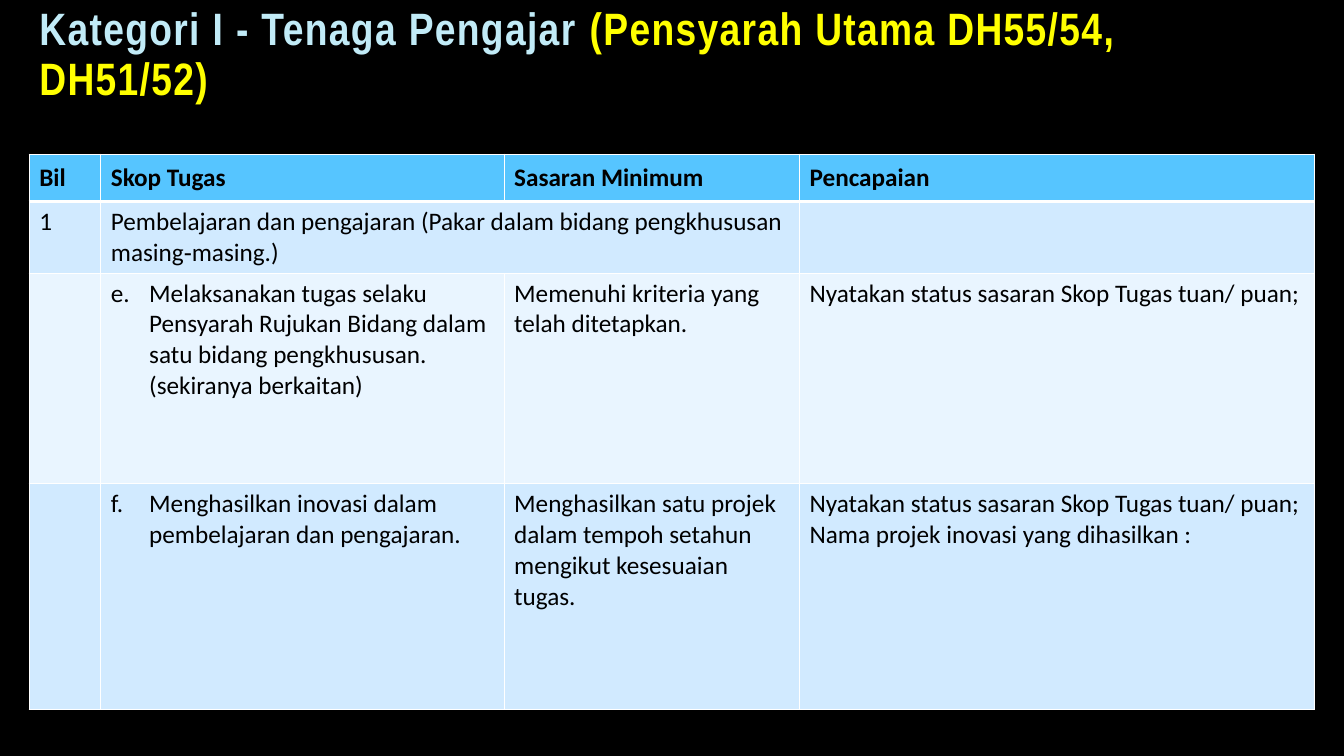
from dataclasses import dataclass

from lxml.etree import SubElement
from pptx import Presentation
from pptx.dml.color import RGBColor
from pptx.enum.text import MSO_ANCHOR, MSO_AUTO_SIZE, PP_ALIGN
from pptx.oxml.ns import qn
from pptx.util import Inches, Pt


@dataclass(frozen=True)
class Theme:
    background: str = "000000"
    title: str = "C1EBF7"
    highlight: str = "FFFF00"
    text: str = "000000"
    header: str = "56C5FF"
    bands: tuple = ("D1EAFF", "E9F5FF")
    border: str = "FFFFFF"
    title_font: str = "Arial Narrow"
    body_font: str = "Calibri"
    title_size: float = 32.4
    body_size: float = 18
    thin: float = 1
    thick: float = 3


@dataclass(frozen=True)
class Lettered:
    """Cell text numbered with the letter at position start."""
    text: str
    start: int


COLUMN_WIDTHS = (0.71, 4, 2.93, 5.11)
ROW_HEIGHTS = (0.47, 0.7, 2.09, 2.24)
STATUS = "Nyatakan status sasaran Skop Tugas tuan/ puan;"
ROWS = (
    ("Bil", "Skop Tugas", "Sasaran Minimum", "Pencapaian"),
    ("1", "Pembelajaran dan pengajaran (Pakar dalam bidang pengkhususan "
          "masing‐masing.)", "", ""),
    ("", Lettered("Melaksanakan tugas selaku Pensyarah Rujukan Bidang dalam satu "
                  "bidang pengkhususan. (sekiranya berkaitan)", 5),
     "Memenuhi kriteria yang telah ditetapkan.", STATUS),
    ("", Lettered("Menghasilkan inovasi dalam pembelajaran dan pengajaran.", 6),
     "Menghasilkan satu projek dalam tempoh setahun mengikut kesesuaian tugas.",
     STATUS + "\nNama projek inovasi yang dihasilkan :"),
)


class SlideBuilder:
    def __init__(self, presentation, theme):
        self.theme = theme
        self.slide = presentation.slides.add_slide(presentation.slide_layouts[5])
        fill = self.slide.background.fill
        fill.solid()
        fill.fore_color.rgb = RGBColor.from_string(theme.background)

    def add_title(self, left, top, width, height, parts):
        title = self.slide.shapes.title
        title.left, title.top = Inches(left), Inches(top)
        title.width, title.height = Inches(width), Inches(height)
        frame = title.text_frame
        frame.word_wrap = True
        frame.auto_size = MSO_AUTO_SIZE.NONE
        frame.vertical_anchor = MSO_ANCHOR.BOTTOM
        paragraph = frame.paragraphs[0]
        paragraph.alignment = PP_ALIGN.LEFT
        paragraph.line_spacing = 0.9
        for text, color in parts:
            run = paragraph.add_run()
            run.text = text
            run.font.name = self.theme.title_font
            run.font.size = Pt(self.theme.title_size)
            run.font.bold = True
            run.font.color.rgb = RGBColor.from_string(color)
            run.font._element.set("spc", "100")

    def add_table(self, left, top, widths, heights, rows):
        frame = self.slide.shapes.add_table(
            len(rows), len(widths), Inches(left), Inches(top),
            Inches(sum(widths)), Inches(sum(heights)))
        table = frame.table
        for column, width in zip(table.columns, widths):
            column.width = Inches(width)
        for row, height in zip(table.rows, heights):
            row.height = Inches(height)
        for row_index, row in enumerate(rows):
            for column_index, content in enumerate(row):
                self.fill_cell(table.cell(row_index, column_index), content, row_index)
        return table

    def fill_cell(self, cell, content, row_index):
        theme = self.theme
        is_header = row_index == 0
        lettered = isinstance(content, Lettered)
        cell.text = content.text if lettered else content
        cell.vertical_anchor = MSO_ANCHOR.MIDDLE if is_header else MSO_ANCHOR.TOP
        for paragraph in cell.text_frame.paragraphs:
            if lettered:
                self.add_letter(paragraph, content.start)
            paragraph.font.name = theme.body_font
            paragraph.font.size = Pt(theme.body_size)
            paragraph.font.bold = is_header
            paragraph.font.color.rgb = RGBColor.from_string(theme.text)
        self.add_borders(cell, row_index)
        cell.fill.solid()
        color = theme.header if is_header else theme.bands[(row_index - 1) % 2]
        cell.fill.fore_color.rgb = RGBColor.from_string(color)

    def add_letter(self, paragraph, start):
        properties = paragraph._p.get_or_add_pPr()
        indent = Inches(0.38)
        properties.set("marL", str(indent))
        properties.set("indent", str(-indent))
        SubElement(properties, qn("a:buFont"), typeface="+mj-lt")
        SubElement(properties, qn("a:buAutoNum"), type="alphaLcPeriod",
                   startAt=str(start))

    def add_borders(self, cell, row_index):
        """Draw thin borders, with a thick one under the header row."""
        theme = self.theme
        thick_side = {0: "lnB", 1: "lnT"}.get(row_index)
        properties = cell._tc.get_or_add_tcPr()
        for side in ("lnL", "lnR", "lnT", "lnB"):
            width = theme.thick if side == thick_side else theme.thin
            line = SubElement(properties, qn(f"a:{side}"), w=str(Pt(width)))
            fill = SubElement(line, qn("a:solidFill"))
            SubElement(fill, qn("a:srgbClr"), val=theme.border)


def main():
    presentation = Presentation()
    presentation.slide_width = Inches(13.33)
    presentation.slide_height = Inches(7.5)
    theme = Theme()
    builder = SlideBuilder(presentation, theme)
    builder.add_title(0.29, 0.42, 11.37, 0.67, (
        ("Kategori I - Tenaga Pengajar ", theme.title),
        ("(Pensyarah Utama DH55/54, DH51/52)", theme.highlight)))
    table = builder.add_table(0.29, 1.53, COLUMN_WIDTHS, ROW_HEIGHTS, ROWS)
    table.cell(1, 1).merge(table.cell(1, 2))
    presentation.save("out.pptx")


if __name__ == "__main__":
    main()
